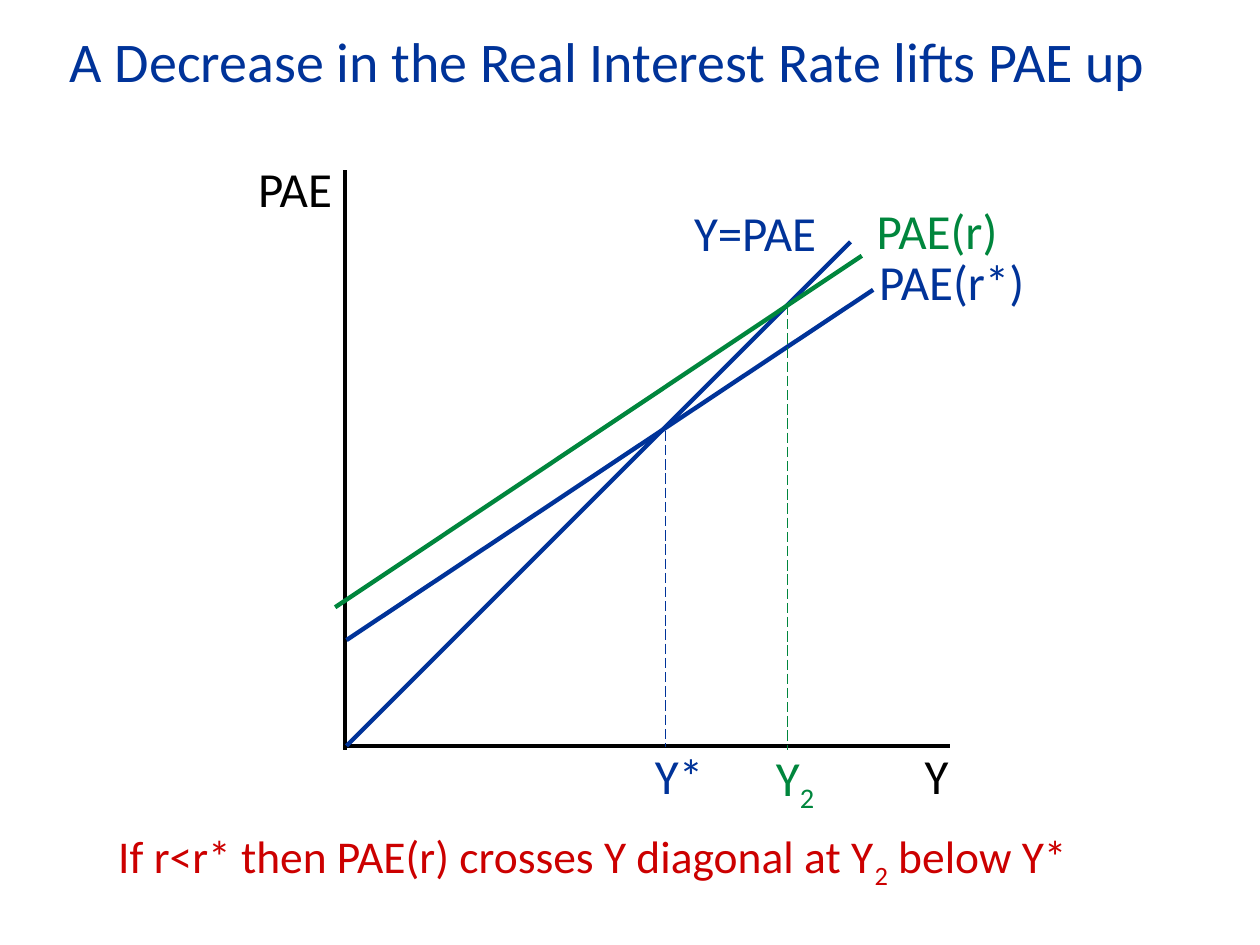
import pptx
import pptx.util
import pptx.dml.color
import pptx.enum.dml
import pptx.enum.shapes
import pptx.enum.text
import lxml.etree

PX = 9144  # EMU per px, 100 px to the inch
RGB = pptx.dml.color.RGBColor
BLACK = RGB(0x00, 0x00, 0x00)
BLUE = RGB(0x00, 0x33, 0x99)
GREEN = RGB(0x00, 0x86, 0x3D)
RED = RGB(0xCC, 0x00, 0x00)
ANCHOR = pptx.enum.text.MSO_ANCHOR
ALIGN = pptx.enum.text.PP_ALIGN

# Content: text pieces between "_" alternate between normal and subscript
TITLE = "A Decrease in the Real Interest Rate lifts PAE up"
TITLE_BOX = (-10, 16, 985, 64)
CAPTION = "If r<r* then PAE(r) crosses Y diagonal at Y_2_ below Y*"
CAPTION_BOX = (84, 655, 860, 54)

# (start x, start y, end x, end y), colour
AXES_AND_CURVES = [
    ((274, 135, 274, 595), BLACK),
    ((274, 592, 754, 592), BLACK),
    ((275, 508, 693, 230), BLUE),
    ((275, 592, 675, 192), BLUE),
    ((266, 482, 684, 203), GREEN),
]
EQUILIBRIUM_DROPS = [
    ((528, 342, 528, 593), BLUE),
    ((625, 242, 625, 595), GREEN),
]
# text, (left, top, width, height), colour, line spacing
LABELS = [
    ("Y", (724, 587, 49, 57), BLACK, 1.0),
    ("PAE(r*)", (688, 195, 146, 57), BLUE, 1.0),
    ("PAE", (195, 130, 82, 49), BLACK, 0.8),
    ("Y=PAE", (541, 156, 125, 57), BLUE, 1.0),
    ("Y*", (510, 587, 66, 57), BLUE, 1.0),
    ("PAE(r)", (686, 154, 162, 57), GREEN, 1.0),
    ("Y_2", (606, 588, 66, 57), GREEN, 1.0),
]


def emu(lengths):
    return [length * PX for length in lengths]


def write(shape, text, size, color, align=ALIGN.LEFT, anchor=ANCHOR.TOP, spacing=1.0):
    frame = shape.text_frame
    frame.word_wrap = True
    frame.auto_size = pptx.enum.text.MSO_AUTO_SIZE.NONE
    frame.vertical_anchor = anchor
    paragraph = frame.paragraphs[0]
    paragraph.alignment = align
    paragraph.line_spacing = spacing
    for index, piece in enumerate(text.split("_")):
        run = paragraph.add_run()
        run.text = piece
        run.font.name = "Calibri"
        run.font.size = pptx.util.Pt(size)
        run.font.color.rgb = color
        if index % 2:
            run.font._element.set("baseline", "-25000")


def draw_line(slide, ends, color, width, dash=None):
    line = slide.shapes.add_connector(
        pptx.enum.shapes.MSO_CONNECTOR.STRAIGHT, *emu(ends))
    line.line.color.rgb = color
    line.line.width = pptx.util.Pt(width)
    if dash:
        line.line.dash_style = dash
    # An empty effect list switches the shadow off
    properties = line._element.spPr
    lxml.etree.SubElement(properties, pptx.oxml.ns.qn("a:effectLst"))


def main():
    deck = pptx.Presentation()
    deck.slide_width, deck.slide_height = emu((1000, 750))
    slide = deck.slides.add_slide(deck.slide_layouts[5])

    # Title
    title = slide.shapes.title
    title.left, title.top, title.width, title.height = emu(TITLE_BOX)
    write(title, TITLE, 32, BLUE, align=ALIGN.CENTER, anchor=ANCHOR.MIDDLE)

    # Diagram
    for ends, color in AXES_AND_CURVES:
        draw_line(slide, ends, color, 2.5)
    for ends, color in EQUILIBRIUM_DROPS:
        draw_line(slide, ends, color, 0.75, pptx.enum.dml.MSO_LINE.LONG_DASH)
    for text, box, color, spacing in LABELS:
        label = slide.shapes.add_textbox(*emu(box))
        write(label, text, 28, color, spacing=spacing)

    # Caption
    caption = slide.shapes.add_textbox(*emu(CAPTION_BOX))
    write(caption, CAPTION, 26, RED, anchor=ANCHOR.MIDDLE)

    deck.save("out.pptx")


if __name__ == "__main__":
    main()
